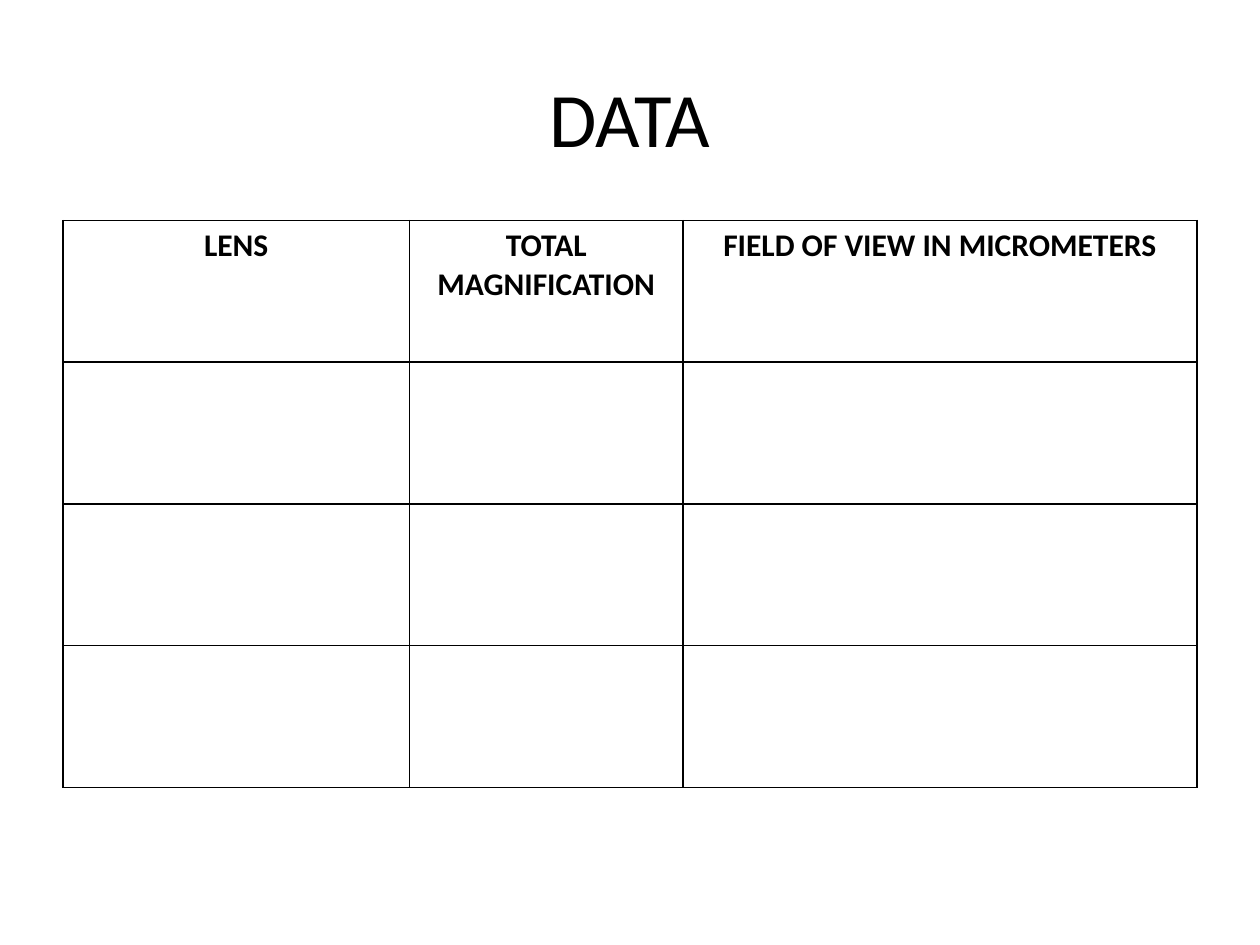
from itertools import product

from lxml.etree import SubElement
from pptx import Presentation
from pptx.dml.color import RGBColor
from pptx.enum.text import MSO_ANCHOR, PP_ALIGN
from pptx.oxml.ns import qn
from pptx.util import Inches, Pt

BLACK = RGBColor(0, 0, 0)
WIDTH, HEIGHT = Inches(10), Inches(7.5)
HEADINGS = ["LENS", "TOTAL MAGNIFICATION", "FIELD OF VIEW IN MICROMETERS"]
COLUMN_SHARES = [0.275, 0.217, 0.408]
ROW_COUNT = 4


def write(frame, text, size=18, bold=False, font="Calibri", color=BLACK):
    paragraph = frame.paragraphs[0]
    paragraph.alignment = PP_ALIGN.CENTER
    run = paragraph.add_run()
    run.text = text
    run.font.name = font
    run.font.size = Pt(size)
    run.font.bold = bold
    run.font.color.rgb = color


class DataSlide:
    """Hold the current slide and its shared style."""

    def __init__(self, deck, border=BLACK, border_width=Pt(1)):
        self.slide = deck.slides.add_slide(deck.slide_layouts[5])
        self.border = border
        self.border_width = border_width

    def place(self, x, y, w, h):
        return int(x * WIDTH), int(y * HEIGHT), int(w * WIDTH), int(h * HEIGHT)

    def title(self, text, *area):
        heading = self.slide.shapes.title
        heading.left, heading.top, heading.width, heading.height = self.place(*area)
        heading.text_frame.vertical_anchor = MSO_ANCHOR.MIDDLE
        write(heading.text_frame, text, size=44)

    def outline(self, cell):
        properties = cell._tc.get_or_add_tcPr()
        for side in ("a:lnL", "a:lnR", "a:lnT", "a:lnB"):
            line = SubElement(properties, qn(side), w=str(self.border_width))
            fill = SubElement(line, qn("a:solidFill"))
            SubElement(fill, qn("a:srgbClr"), val=str(self.border))

    def table(self, headings, shares, row_count, *area):
        grid = self.slide.shapes.add_table(
            row_count, len(headings), *self.place(*area)
        ).table
        grid.first_row = grid.horz_banding = False
        for column, share in zip(grid.columns, shares):
            column.width = int(share * WIDTH)
        for row, column in product(range(row_count), range(len(headings))):
            cell = grid.cell(row, column)
            self.outline(cell)
            cell.fill.background()
            if row == 0:
                write(cell.text_frame, headings[column], bold=True)


def main():
    deck = Presentation()
    deck.slide_width, deck.slide_height = WIDTH, HEIGHT
    data = DataSlide(deck)
    data.title("DATA", 0.05, 0.04, 0.9, 1 / 6)
    data.table(HEADINGS, COLUMN_SHARES, ROW_COUNT, 0.05, 7 / 30, 0.9, 0.6)
    deck.save("out.pptx")


if __name__ == "__main__":
    main()
